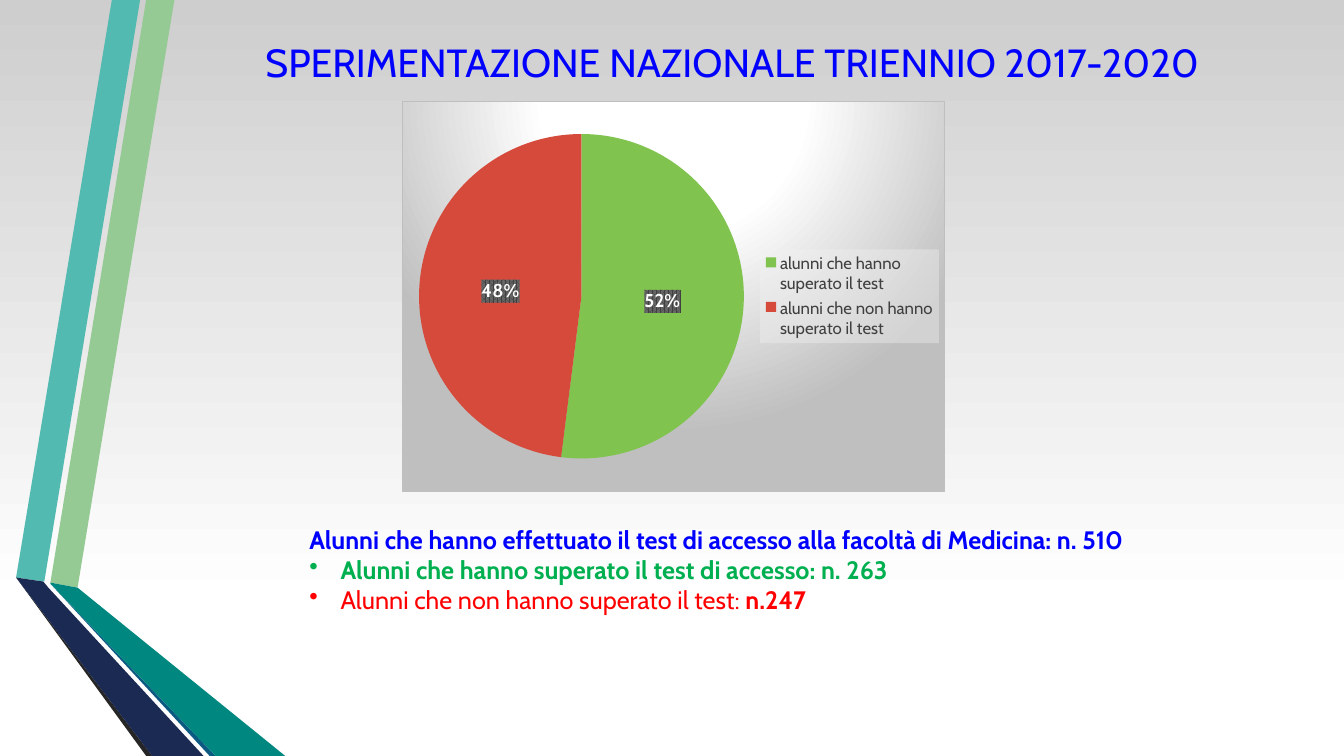
from dataclasses import dataclass

from lxml import etree
from pptx import Presentation
from pptx import util as u
from pptx.chart import data as chart_data
from pptx.dml.color import RGBColor
from pptx.enum import chart as chart_enum
from pptx.enum import text
from pptx.oxml import parse_xml
from pptx.oxml.ns import nsdecls, qn

FONT = "Cabin"
WHITE = RGBColor(0xFF, 0xFF, 0xFF)
BLACK = RGBColor(0x00, 0x00, 0x00)
SILVER = RGBColor(0xCE, 0xCE, 0xCE)
CHARCOAL = RGBColor(0x40, 0x40, 0x40)
INK = RGBColor(0x26, 0x26, 0x26)
BLUE = RGBColor(0x00, 0x00, 0xFF)
GREEN = RGBColor(0x00, 0xB0, 0x50)
RED = RGBColor(0xFF, 0x00, 0x00)
LIGHT_GREEN = RGBColor(0x96, 0xCA, 0x94)
AQUA = RGBColor(0x52, 0xBA, 0xB0)
STEEL = RGBColor(0x0C, 0x5A, 0x82)
TEAL = RGBColor(0x00, 0x88, 0x80)
NAVY = RGBColor(0x1A, 0x2A, 0x52)
PASSED = RGBColor(0x80, 0xC3, 0x4F)
FAILED = RGBColor(0xD6, 0x4A, 0x3B)

CHART_FILL = """<c:spPr %s><a:gradFill><a:gsLst>
<a:gs pos="0"><a:srgbClr val="FFFFFF"/></a:gs>
<a:gs pos="39000"><a:srgbClr val="FFFFFF"/></a:gs>
<a:gs pos="100000"><a:srgbClr val="BFBFBF"/></a:gs></a:gsLst>
<a:path path="circle"><a:fillToRect l="50000" t="-80000" r="50000" b="180000"/></a:path>
</a:gradFill><a:ln w="9525"><a:solidFill><a:srgbClr val="BFBFBF"/></a:solidFill></a:ln></c:spPr>"""
LEGEND_FILL = """<c:spPr %s><a:solidFill><a:srgbClr val="F2F2F2"><a:alpha val="39000"/>
</a:srgbClr></a:solidFill><a:ln><a:noFill/></a:ln></c:spPr>"""
LABEL_FILL = """<c:spPr %s><a:pattFill prst="pct75"><a:fgClr><a:srgbClr val="404040"/></a:fgClr>
<a:bgClr><a:srgbClr val="666666"/></a:bgClr></a:pattFill><a:ln><a:noFill/></a:ln></c:spPr>"""


@dataclass(frozen=True)
class Ribbon:
    color: RGBColor
    points: tuple[tuple[float, float], ...]


@dataclass(frozen=True)
class Piece:
    words: str
    color: RGBColor
    bold: bool = True
    size: int = 18


@dataclass(frozen=True)
class Line:
    pieces: tuple[Piece, ...]
    bullet: bool = False
    centered: bool = False


RIBBONS = (
    Ribbon(LIGHT_GREEN, ((0.5, 5.78), (0.77, 5.83), (1.73, 0), (1.45, 0))),
    Ribbon(AQUA, ((1.39, 0), (1.11, 0), (0.16, 5.73), (0.44, 5.77))),
    Ribbon(INK, ((0.16, 5.73), (1.45, 7.5), (1.51, 7.5))),
    Ribbon(STEEL, ((0.5, 5.79), (2.08, 7.5), (2.14, 7.5))),
    Ribbon(TEAL, ((0.5, 5.79), (2.14, 7.5), (2.83, 7.5), (0.77, 5.83), (0.5, 5.78))),
    Ribbon(NAVY, ((2.02, 7.5), (0.48, 5.83), (0.43, 5.77), (0.16, 5.73), (1.51, 7.5))),
)
TITLE = (Line((Piece("SPERIMENTAZIONE NAZIONALE TRIENNIO 2017-2020", BLUE, False, 28),), centered=True),)
RESULTS = (
    Line((Piece("Alunni che hanno effettuato il test di accesso alla facoltà di Medicina: n. 510", BLUE),)),
    Line((Piece("Alunni che hanno superato il test di accesso: n. 263", GREEN),), bullet=True),
    Line((Piece("Alunni che non hanno superato il test: ", RED, False), Piece("n.247", RED)), bullet=True),
)


def paint_background(slide) -> None:
    fill = slide.background.fill
    fill.gradient()
    fill.gradient_angle = 90
    for stop, color, position in zip(fill.gradient_stops, (WHITE, SILVER), (0.2, 1.0)):
        stop.color.rgb = color
        stop.position = position


def draw_ribbon(slide, ribbon: Ribbon) -> None:
    points = [(u.Inches(x), u.Inches(y)) for x, y in ribbon.points]
    builder = slide.shapes.build_freeform(*points[0])
    builder.add_line_segments(points[1:], close=True)
    shape = builder.convert_to_shape()
    shape.shadow.inherit = False
    shape.fill.solid()
    shape.fill.fore_color.rgb = ribbon.color
    shape.line.fill.background()


def style_font(font, size: float, color: RGBColor, bold: bool = False) -> None:
    font.name = FONT
    font.size = u.Pt(size)
    font.bold = bold
    font.color.rgb = color


def add_bullet(paragraph) -> None:
    properties = paragraph._p.get_or_add_pPr()
    properties.set("marL", str(u.Inches(0.31)))
    properties.set("indent", str(-u.Inches(0.31)))
    etree.SubElement(properties, qn("a:buChar")).set("char", "•")


def add_lines(slide, lines: tuple[Line, ...], left: float, top: float, width: float, height: float):
    box = slide.shapes.add_textbox(*map(u.Inches, (left, top, width, height)))
    frame = box.text_frame
    frame.word_wrap = True
    for index, line in enumerate(lines):
        paragraph = frame.add_paragraph() if index else frame.paragraphs[0]
        if line.bullet:
            add_bullet(paragraph)
        if line.centered:
            paragraph.alignment = text.PP_ALIGN.CENTER
        for piece in line.pieces:
            run = paragraph.add_run()
            run.text = piece.words
            style_font(run.font, piece.size, piece.color, piece.bold)
    return frame


def manual_layout(x: float, y: float, width: float, height: float, target: str = ""):
    values = (("xMode", "edge"), ("yMode", "edge"), ("x", x), ("y", y), ("w", width), ("h", height))
    inner = "".join(f'<c:{name} val="{value}"/>' for name, value in values)
    return parse_xml(f"<c:layout {nsdecls('c')}><c:manualLayout>{target}{inner}</c:manualLayout></c:layout>")


def chart_fill(template: str):
    return parse_xml(template % nsdecls("c", "a"))


def draw_chart(slide) -> None:
    data = chart_data.CategoryChartData()
    data.categories = ["alunni che hanno superato il test", "alunni che non hanno superato il test"]
    data.add_series("Series 1", (52, 48))
    place = map(u.Inches, (3.99, 1, 5.38, 3.88))
    chart = slide.shapes.add_chart(chart_enum.XL_CHART_TYPE.PIE, *place, data).chart
    style_font(chart.font, 10, BLACK)
    chart.has_title = False
    chart.has_legend = True
    chart.legend.position = chart_enum.XL_LEGEND_POSITION.RIGHT
    chart.legend.include_in_layout = False
    style_font(chart.legend.font, 12, CHARCOAL)

    plot = chart.plots[0]
    plot.vary_by_categories = True
    for index, color in enumerate((PASSED, FAILED)):
        point_format = plot.series[0].points[index].format
        point_format.fill.solid()
        point_format.fill.fore_color.rgb = color
        point_format.line.fill.background()
    labels = plot.series[0].data_labels
    labels.show_percentage = True
    labels.show_value = False
    labels.number_format = "0%"
    labels.number_format_is_linked = False
    labels.position = chart_enum.XL_LABEL_POSITION.CENTER
    style_font(labels.font, 13.3, WHITE, True)

    root = chart.element
    root.find(qn("c:chart")).addnext(chart_fill(CHART_FILL))
    root.xpath(".//c:ser/c:dLbls/c:txPr")[0].addprevious(chart_fill(LABEL_FILL))
    root.xpath(".//c:legend/c:txPr")[0].addprevious(chart_fill(LEGEND_FILL))
    for layout in root.xpath(".//c:plotArea/c:layout | .//c:legend/c:layout"):
        layout.getparent().remove(layout)
    plot_layout = manual_layout(0.03, 0.08, 0.6, 0.84, '<c:layoutTarget val="inner"/>')
    root.xpath(".//c:plotArea")[0].insert(0, plot_layout)
    root.xpath(".//c:legendPos")[0].addnext(manual_layout(0.66, 0.38, 0.33, 0.24))


def main() -> None:
    presentation = Presentation()
    presentation.slide_width = u.Inches(13.33)
    presentation.slide_height = u.Inches(7.5)
    slide = presentation.slides.add_slide(presentation.slide_layouts[6])
    paint_background(slide)
    for ribbon in RIBBONS:
        draw_ribbon(slide, ribbon)
    draw_chart(slide)
    add_lines(slide, RESULTS, 2.97, 5.15, 11.45, 1.02)
    title = add_lines(slide, TITLE, 2.22, -0.02, 10.08, 1.7)
    title.vertical_anchor = text.MSO_ANCHOR.MIDDLE
    title.margin_bottom = u.Inches(0.48)
    presentation.save("out.pptx")


if __name__ == "__main__":
    main()
